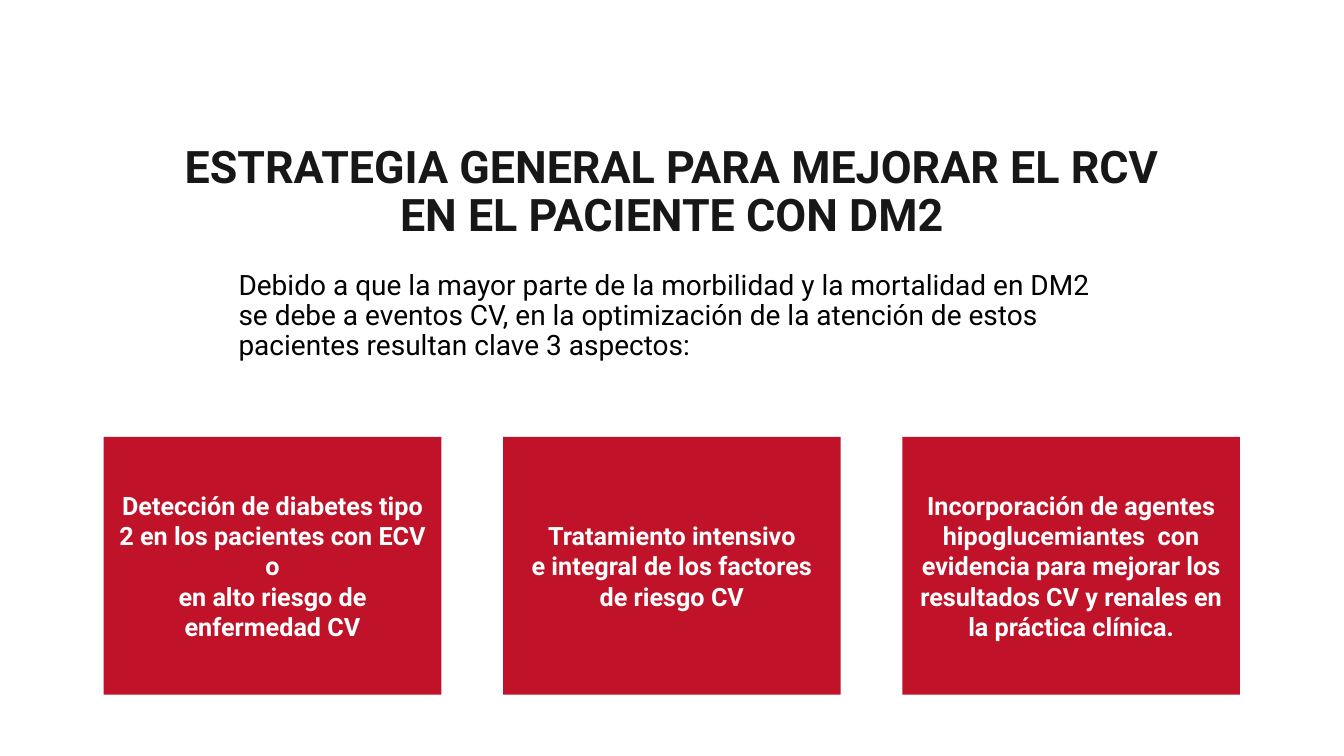
"""Build the slide on the general strategy to improve RCV in patients with DM2."""
from pptx import Presentation
from pptx.dml.color import RGBColor
from pptx.enum.shapes import MSO_SHAPE
from pptx.enum.text import MSO_ANCHOR, PP_ALIGN
from pptx.util import Pt

RECTANGLE = MSO_SHAPE.RECTANGLE
TOP, MIDDLE = MSO_ANCHOR.TOP, MSO_ANCHOR.MIDDLE
LEFT, CENTER = PP_ALIGN.LEFT, PP_ALIGN.CENTER


def color(value):
    return RGBColor.from_string(value)


def write(frame, text, *, size, ink, bold=False, align=CENTER, anchor=MIDDLE,
          spacing=1.0, margins=(7.2, 3.6)):
    frame.word_wrap = True
    frame.vertical_anchor = anchor
    frame.margin_left = frame.margin_right = Pt(margins[0])
    frame.margin_top = frame.margin_bottom = Pt(margins[1])
    frame.text = text
    for paragraph in frame.paragraphs:
        paragraph.alignment = align
        paragraph.line_spacing = spacing
        for run in paragraph.runs:
            run.font.name = "Roboto"
            run.font.size = Pt(size)
            run.font.bold = bold
            run.font.color.rgb = color(ink)


deck = Presentation()
deck.slide_width, deck.slide_height = Pt(960), Pt(540)
slide = deck.slides.add_slide(deck.slide_layouts[5])

title = slide.shapes.title
title.left, title.top, title.width, title.height = Pt(66), Pt(85.5), Pt(828), Pt(104.4)
write(title.text_frame,
      "ESTRATEGIA GENERAL PARA MEJORAR EL RCV\nEN EL PACIENTE CON DM2",
      size=32, ink="181717", bold=True, spacing=0.9)

introduction = slide.shapes.add_textbox(Pt(163.3), Pt(190), Pt(633.6), Pt(80))
write(introduction.text_frame,
      "Debido a que la mayor parte de la morbilidad y la mortalidad en DM2 "
      "se debe a eventos CV, en la optimización de la atención de estos "
      "pacientes resultan clave 3 aspectos:",
      size=20, ink="000000", align=LEFT, anchor=TOP, spacing=0.9)

aspects = [
    "Detección de diabetes tipo 2 en los pacientes con ECV o\n"
    "en alto riesgo de enfermedad CV",
    "Tratamiento intensivo\ne integral de los factores de riesgo CV",
    "Incorporación de agentes hipoglucemiantes  con evidencia para mejorar "
    "los resultados CV y renales en la práctica clínica.",
]
first_left, pitch = 74.1, 285.2
for index, aspect in enumerate(aspects):
    card = slide.shapes.add_shape(
        RECTANGLE, Pt(first_left + index * pitch), Pt(312), Pt(241.2), Pt(184.2))
    card.shadow.inherit = False
    card.fill.solid()
    card.fill.fore_color.rgb = color("C01228")
    card.line.fill.background()
    write(card.text_frame, aspect, size=18, ink="FFFFFF", bold=True, margins=(9.6, 4.8))

deck.save("out.pptx")
